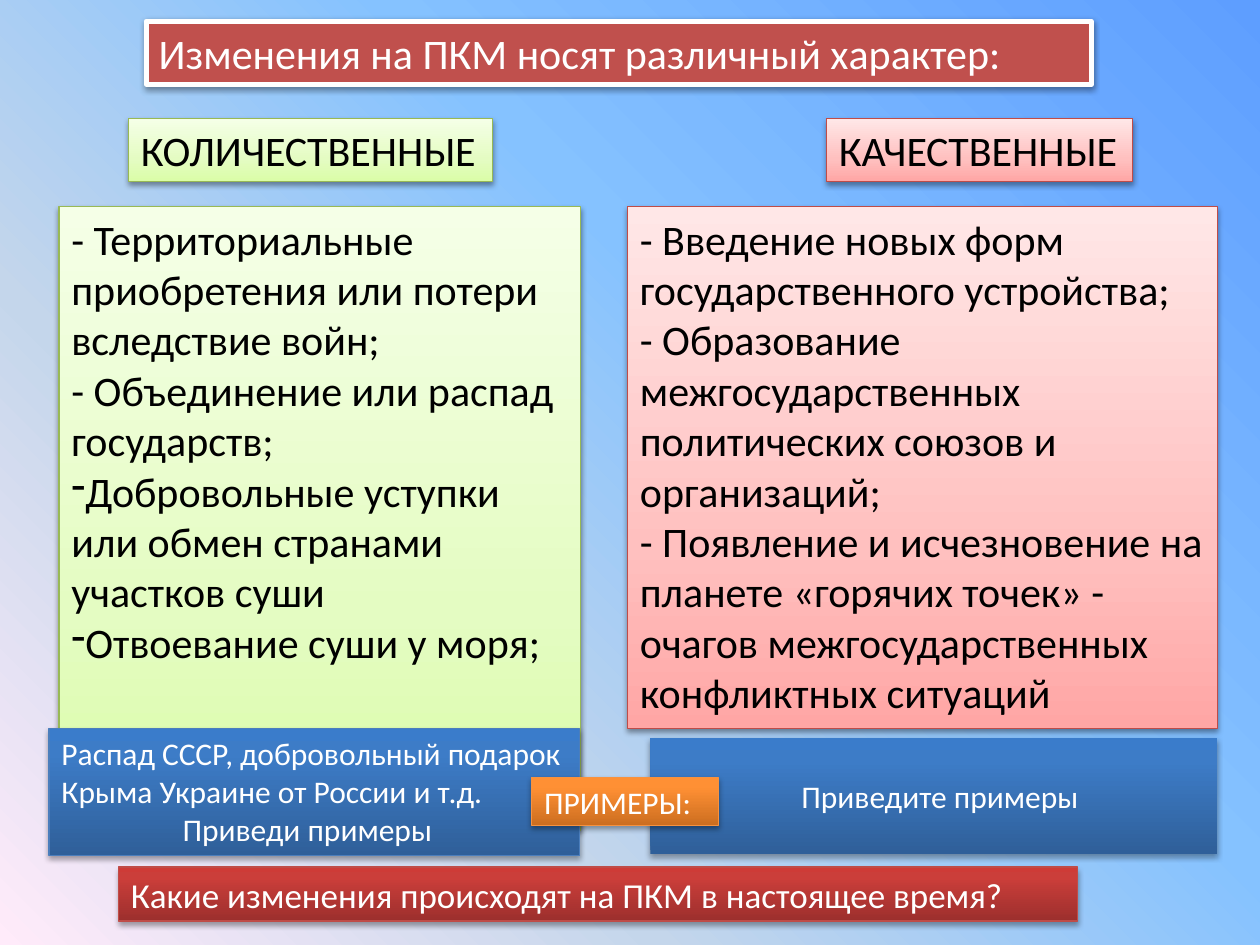
import pptx
import pptx.dml.color
import pptx.enum.shapes
import pptx.enum.text
import pptx.oxml
import pptx.oxml.ns
import pptx.util
from pptx.dml.color import RGBColor
from pptx.util import Cm

FONT = "Calibri"
BLACK = RGBColor(0x00, 0x00, 0x00)
WHITE = RGBColor(0xFF, 0xFF, 0xFF)
TITLE_RED = RGBColor(0xC0, 0x50, 0x4D)
GREEN_LINE = RGBColor(0x98, 0xB9, 0x55)
RED_LINE = RGBColor(0xBF, 0x4C, 0x48)
BLUE_LINE = RGBColor(0x4B, 0x7E, 0xBC)
ORANGE_LINE = RGBColor(0xF6, 0x92, 0x40)

SKY = [(0, RGBColor(0x5E, 0x9E, 0xFF)), (40, RGBColor(0x85, 0xC2, 0xFF)),
       (70, RGBColor(0xC4, 0xD6, 0xEB)), (100, RGBColor(0xFF, 0xEB, 0xFA))]
PALE_GREEN = [(0, RGBColor(0xDA, 0xFD, 0xA7)), (35, RGBColor(0xE4, 0xFC, 0xC2)),
              (100, RGBColor(0xF5, 0xFF, 0xE7))]
PALE_RED = [(0, RGBColor(0xFF, 0xA6, 0xA5)), (35, RGBColor(0xFF, 0xC0, 0xBF)),
            (100, RGBColor(0xFF, 0xE7, 0xE7))]
BLUE = [(0, RGBColor(0x2F, 0x5F, 0x99)), (80, RGBColor(0x3D, 0x7C, 0xC7)),
        (100, RGBColor(0x3A, 0x7C, 0xCB))]
RED = [(0, RGBColor(0x9C, 0x2F, 0x2D)), (80, RGBColor(0xCB, 0x3E, 0x3A)),
       (100, RGBColor(0xCE, 0x3B, 0x37))]
ORANGE = [(0, RGBColor(0xCC, 0x6E, 0x20)), (80, RGBColor(0xFF, 0x90, 0x34)),
          (100, RGBColor(0xFF, 0x91, 0x36))]


def xml(text):
    ns = pptx.oxml.ns.nsdecls("a")
    return pptx.oxml.parse_xml(text.replace("NS", ns, 1))


def set_gradient(fill, element, stops, angle):
    fill.gradient()
    fill.gradient_angle = angle
    gs_list = element.find(".//" + pptx.oxml.ns.qn("a:gsLst"))
    for gs in list(gs_list):
        gs_list.remove(gs)
    for pos, color in stops:
        gs_list.append(xml(f'<a:gs NS pos="{pos * 1000}"><a:srgbClr val="{color}"/></a:gs>'))


def set_shadow(sp, dist, alpha):
    sp.shadow.inherit = False
    effects = sp._element.spPr.find(pptx.oxml.ns.qn("a:effectLst"))
    effects.append(xml(
        f'<a:outerShdw NS blurRad="40000" dist="{dist}" dir="5400000" rotWithShape="0">'
        f'<a:srgbClr val="000000"><a:alpha val="{alpha * 1000}"/></a:srgbClr></a:outerShdw>'))


def add_box(s, box, fill, line, texts, size, color, line_width=0.75):
    sp = s.shapes.add_shape(pptx.enum.shapes.MSO_SHAPE.RECTANGLE, *map(Cm, box))
    if isinstance(fill, list):
        set_gradient(sp.fill, sp._element, fill, 90)
    else:
        sp.fill.solid()
        sp.fill.fore_color.rgb = fill
    if line is None:
        sp.line.fill.background()
    else:
        sp.line.color.rgb = line
        sp.line.width = pptx.util.Pt(line_width)
    if color == BLACK or fill == TITLE_RED:
        set_shadow(sp, 20000, 38)
    else:
        set_shadow(sp, 23000, 35)
    tf = sp.text_frame
    tf.word_wrap = True
    tf.vertical_anchor = pptx.enum.text.MSO_ANCHOR.TOP
    for i, text in enumerate(texts):
        p = tf.add_paragraph() if i else tf.paragraphs[0]
        p.text = text
        p.alignment = pptx.enum.text.PP_ALIGN.LEFT
        p.font.name = FONT
        p.font.size = pptx.util.Pt(size)
        p.font.color.rgb = color
    return tf


def set_dash(p):
    p_pr = p._p.get_or_add_pPr()
    p_pr.insert_element_before(xml('<a:buChar NS char="-"/>'), "a:tabLst", "a:defRPr", "a:extLst")


def indent(p, length):
    p._p.get_or_add_pPr().set("marL", str(Cm(length)))


def main():
    prs = pptx.Presentation()
    prs.slide_width, prs.slide_height = Cm(25.4), Cm(19.05)
    s = prs.slides.add_slide(prs.slide_layouts[6])
    set_gradient(s.background.fill, s.element, SKY, 225)

    add_box(s, (2.95, 0.43, 19.05, 1.27), TITLE_RED, WHITE,
            ["Изменения на ПКМ носят различный характер:"], 24, WHITE, 3)
    add_box(s, (2.59, 2.39, 7.34, 1.27), PALE_GREEN, GREEN_LINE, ["КОЛИЧЕСТВЕННЫЕ"], 24, BLACK)
    add_box(s, (16.66, 2.39, 6.17, 1.27), PALE_RED, RED_LINE, ["КАЧЕСТВЕННЫЕ"], 24, BLACK)

    quantity = add_box(s, (1.19, 4.17, 10.52, 12.57), PALE_GREEN, GREEN_LINE, [
        "- Территориальные приобретения или потери вследствие войн;",
        "- Объединение или распад государств;",
        "Добровольные уступки или обмен странами участков суши",
        "Отвоевание суши у моря;"], 24, BLACK)
    for p in quantity.paragraphs[2:]:
        set_dash(p)
    add_box(s, (12.65, 4.17, 11.89, 10.52), PALE_RED, RED_LINE, [
        "- Введение новых форм государственного устройства;",
        "- Образование межгосударственных политических союзов и организаций;",
        "- Появление и исчезновение на планете «горячих точек» - очагов "
        "межгосударственных конфликтных ситуаций"], 24, BLACK)

    examples = add_box(s, (0.99, 14.68, 10.69, 2.57), BLUE, BLUE_LINE, [
        "Распад СССР, добровольный подарок",
        "Крыма Украине от России и т.д.",
        "Приведи примеры"], 18, WHITE)
    indent(examples.paragraphs[2], 2.44)
    task = add_box(s, (13.11, 14.88, 11.43, 2.34), BLUE, None, ["Приведите примеры"], 18, WHITE)
    task.vertical_anchor = pptx.enum.text.MSO_ANCHOR.MIDDLE
    task.paragraphs[0].alignment = pptx.enum.text.PP_ALIGN.CENTER
    indent(task.paragraphs[0], 0.25)

    add_box(s, (2.39, 17.48, 19.33, 1.09), RED, RED_LINE,
            ["Какие изменения происходят на ПКМ в настоящее время?"], 20, WHITE)
    add_box(s, (10.72, 15.67, 3.76, 0.97), ORANGE, ORANGE_LINE, ["ПРИМЕРЫ:"], 18, WHITE)
    prs.save("out.pptx")


if __name__ == "__main__":
    main()
